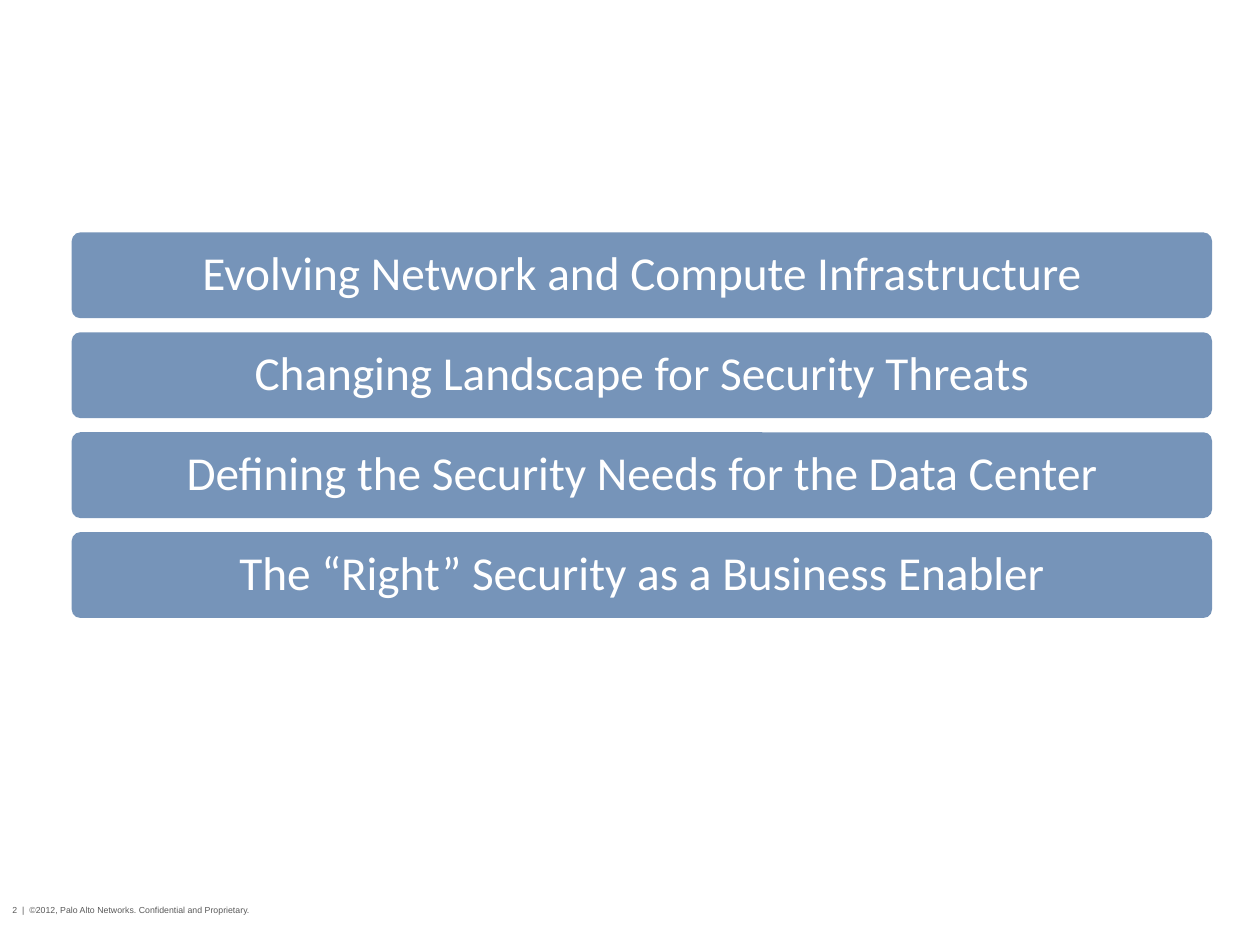
"""Build an agenda slide of four stacked bars with a footer line."""
from dataclasses import dataclass

from pptx import Presentation
from pptx.dml.color import RGBColor
from pptx.enum.shapes import MSO_SHAPE
from pptx.enum.text import MSO_ANCHOR, PP_ALIGN
from pptx.slide import Slide
from pptx.text.text import TextFrame
from pptx.util import Pt

LEFT, TOP, WIDTH, HEIGHT, STEP = 41, 132.8, 651.6, 49, 57.1
TOPICS = (
    "Evolving Network and Compute Infrastructure",
    "Changing Landscape for Security Threats",
    "Defining the Security Needs for the Data Center",
    "The “Right” Security as a Business Enabler",
)
FOOTER = "2  |  ©2012, Palo Alto Networks. Confidential and Proprietary."


@dataclass
class Bar:
    text: str
    top: float


def paint(code: str) -> RGBColor:
    return RGBColor.from_string(code)


def write(frame: TextFrame, text: str, color: str, font: dict, para: dict) -> None:
    frame.word_wrap = True
    frame.vertical_anchor = MSO_ANCHOR.MIDDLE
    line = frame.paragraphs[0]
    run = line.add_run()
    run.text = text
    for target, values in ((line, para), (run.font, font)):
        for key, value in values.items():
            setattr(target, key, value)
    run.font.color.rgb = paint(color)


def draw_bar(slide: Slide, bar: Bar) -> None:
    shape = slide.shapes.add_shape(
        MSO_SHAPE.ROUNDED_RECTANGLE, Pt(LEFT), Pt(bar.top), Pt(WIDTH), Pt(HEIGHT)
    )
    shape.adjustments[0] = 0.1
    shape.shadow.inherit = False
    shape.fill.solid()
    shape.fill.fore_color.rgb = paint("7694B9")
    shape.line.fill.background()
    write(
        shape.text_frame, bar.text, "FFFFFF",
        {"name": "Calibri", "size": Pt(27)},
        {"alignment": PP_ALIGN.CENTER, "line_spacing": 0.9},
    )


def draw_foot(slide: Slide) -> None:
    box = slide.shapes.add_textbox(Pt(0), Pt(505.4), Pt(212.4), Pt(28.8))
    write(
        box.text_frame, FOOTER, "595959",
        {"name": "Arial", "size": Pt(5)},
        {"alignment": PP_ALIGN.LEFT},
    )


def main() -> None:
    deck = Presentation()
    deck.slide_width, deck.slide_height = Pt(720), Pt(540)
    slide = deck.slides.add_slide(deck.slide_layouts[6])
    draw_foot(slide)
    for row, text in enumerate(TOPICS):
        draw_bar(slide, Bar(text, TOP + row * STEP))
    deck.save("out.pptx")


if __name__ == "__main__":
    main()
